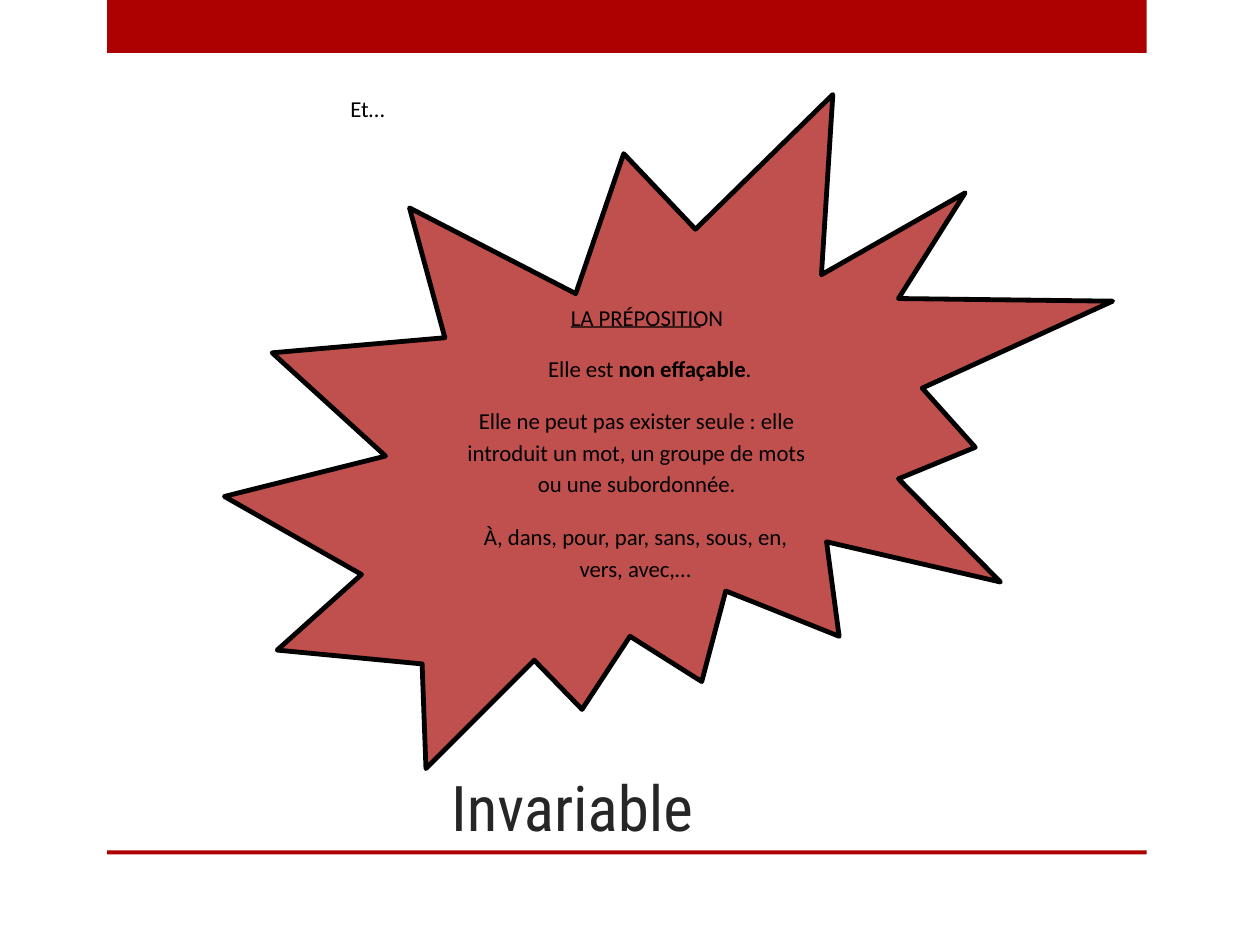
from lxml import etree
from pptx import Presentation
from pptx.dml.color import RGBColor
from pptx.enum.shapes import MSO_SHAPE
from pptx.enum.text import MSO_ANCHOR, PP_ALIGN
from pptx.oxml.ns import qn
from pptx.util import Pt

RECTANGLE = MSO_SHAPE.RECTANGLE
BOTTOM, TOP = MSO_ANCHOR.BOTTOM, MSO_ANCHOR.TOP
CENTER, LEFT = PP_ALIGN.CENTER, PP_ALIGN.LEFT

COLORS = {"band": "AD0101", "burst": "C0504D", "ink": "000000", "title": "262626"}
BODY_FONT, BODY_SIZE = "Calibri", 13
LINE_HEIGHT = 16

# left, top, width, height
BANDS = [(61.2, 0, 594, 30.2), (61.2, 486, 594, 2.2)]
UNDERLINE = (326.2, 186.5, 74.2, 0.8)
TITLE = ("Invariable", (59.8, 360, 534.2, 126))

# left, top, width, runs as (wording, bold)
LINES = [
    (200.2, 54, 27, [("Et…", False)]),
    (326.2, 173.5, 89, [("LA PRÉPOSITION", False)]),
    (313.2, 203, 119, [("Elle est ", False), ("non effaçable", True), (".", False)]),
    (273.6, 232.6, 180, [("Elle ne peut pas exister seule : elle", False)]),
    (267.1, 250.6, 205, [("introduit un mot, un groupe de mots", False)]),
    (307.4, 268.6, 119, [("ou une subordonnée.", False)]),
    (276.5, 298.8, 184, [("À, dans, pour, par, sans, sous, en,", False)]),
    (331.2, 316.8, 72, [("vers, avec,…", False)]),
]

BURST = [
    (397.4, 131), (475.9, 54), (469.4, 157), (551.5, 110.2),
    (513.4, 170.6), (635.8, 172.1), (527, 221.8), (557.3, 255.6),
    (513.4, 273.6), (571.7, 332.6), (472.3, 309.6), (479.5, 363.6),
    (414.7, 337.7), (401, 389.5), (360, 363.6), (332.6, 405.4),
    (305.3, 377.3), (243.4, 439.2), (241.2, 379.4), (158.4, 371.5),
    (206.6, 328.3), (128.2, 283.7), (220.3, 260.6), (155.5, 201.6),
    (254.2, 193), (234, 118.8), (329, 167.8), (356.4, 87.8),
]


def color(name):
    return RGBColor.from_string(COLORS[name])


def add_bar(slide, box, fill):
    bar = slide.shapes.add_shape(RECTANGLE, *map(Pt, box))
    bar.shadow.inherit = False
    bar.fill.solid()
    bar.fill.fore_color.rgb = color(fill)
    bar.line.fill.background()


def add_burst(slide):
    start, *corners = [(Pt(x), Pt(y)) for x, y in BURST]
    builder = slide.shapes.build_freeform(*start)
    builder.add_line_segments(corners, close=True)
    burst = builder.convert_to_shape()
    burst.shadow.inherit = False
    burst.fill.solid()
    burst.fill.fore_color.rgb = color("burst")
    burst.line.color.rgb = color("ink")
    burst.line.width = Pt(2.75)
    etree.SubElement(burst.line._get_or_add_ln(), qn("a:round"))


def add_text(slide, box, runs, font, size, ink, align=LEFT, anchor=TOP, inset=0, wrap=False):
    frame = slide.shapes.add_textbox(*map(Pt, box)).text_frame
    frame.word_wrap = wrap
    frame.vertical_anchor = anchor
    frame.margin_left = frame.margin_right = Pt(2 * inset)
    frame.margin_top = frame.margin_bottom = Pt(inset)
    paragraph = frame.paragraphs[0]
    paragraph.alignment = align
    paragraph.font.name = font
    paragraph.font.size = Pt(size)
    paragraph.font.color.rgb = color(ink)
    for wording, bold in runs:
        run = paragraph.add_run()
        run.text = wording
        if bold:
            run.font.bold = True


def main():
    prs = Presentation()
    prs.slide_width, prs.slide_height = Pt(720), Pt(540)
    slide = prs.slides.add_slide(prs.slide_layouts[6])

    for band in BANDS:
        add_bar(slide, band, "band")
    title, title_box = TITLE
    add_text(slide, title_box, [(title, False)], "Roboto Condensed", 36, "title",
             CENTER, BOTTOM, inset=3.6, wrap=True)
    add_burst(slide)
    for left, top, width, runs in LINES:
        add_text(slide, (left, top, width, LINE_HEIGHT), runs, BODY_FONT, BODY_SIZE, "ink")
    add_bar(slide, UNDERLINE, "ink")

    prs.save("out.pptx")


if __name__ == "__main__":
    main()
